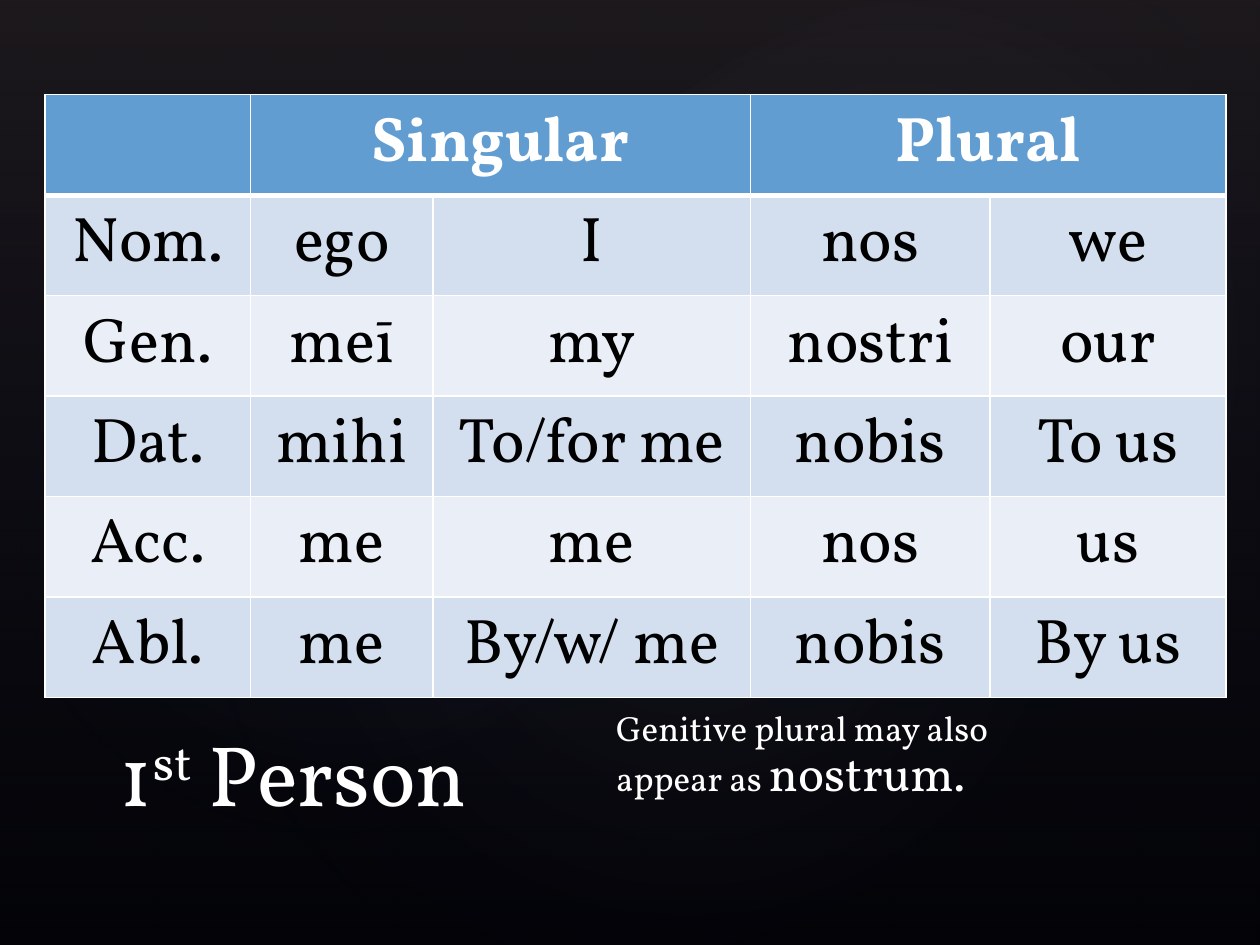
"""Builds a slide with the declension of the Latin first person pronoun."""
from lxml import etree
from pptx import Presentation
from pptx.dml.color import RGBColor
from pptx.enum.shapes import MSO_SHAPE
from pptx.enum.text import MSO_ANCHOR, MSO_AUTO_SIZE, PP_ALIGN
from pptx.oxml import parse_xml
from pptx.util import Cm, Pt

RECTANGLE, OVAL = MSO_SHAPE.RECTANGLE, MSO_SHAPE.OVAL
CENTER, LEFT = PP_ALIGN.CENTER, PP_ALIGN.LEFT
BOTTOM = MSO_ANCHOR.BOTTOM
NO_FIT, GROW = MSO_AUTO_SIZE.NONE, MSO_AUTO_SIZE.SHAPE_TO_FIT_TEXT
FONT = "Vollkorn"
DRAWING = "http://schemas.openxmlformats.org/drawingml/2006/main"
COLORS = {
    "black": "000000", "white": "FFFFFF", "header": "629DD1",
    "odd": "D3DFEE", "even": "EAEFF7",
    "shade": "504652", "navy": "242852", "glow": "C4BCC6",
}
LINEAR = '<a:lin ang="5400000" scaled="0"/>'
RADIAL = '<a:path path="circle"><a:fillToRect l="50000" t="50000" r="50000" b="50000"/></a:path>'


def style_span(span, size, color, bold=False):
    span.font.name = FONT
    span.font.size = Pt(size)
    span.font.bold = bold
    span.font.color.rgb = RGBColor.from_string(COLORS[color])


def add_gradient(kind, box, turn, stops, direction):
    shape = page.shapes.add_shape(kind, *(Cm(length) for length in box))
    shape.rotation = turn
    shape.shadow.inherit = False
    shape.line.fill.background()
    shape.fill.background()
    marks = "".join(
        f'<a:gs pos="{place * 1000}"><a:srgbClr val="{COLORS[color]}">'
        f'<a:alpha val="{alpha * 1000}"/></a:srgbClr></a:gs>'
        for place, color, alpha in stops
    )
    gradient = parse_xml(
        f'<a:gradFill xmlns:a="{DRAWING}" rotWithShape="1"><a:gsLst>{marks}</a:gsLst>{direction}</a:gradFill>'
    )
    properties = shape._element.spPr
    properties.replace(properties.find(f"{{{DRAWING}}}noFill"), gradient)


deck = Presentation()
deck.slide_width, deck.slide_height = Cm(25.4), Cm(19.05)
page = deck.slides.add_slide(deck.slide_layouts[5])
page.background.fill.solid()
page.background.fill.fore_color.rgb = RGBColor.from_string(COLORS["black"])

add_gradient(RECTANGLE, (0, 0, 25.4, 19.05), 0, [(0, "shade", 36), (100, "navy", 10)], LINEAR)
glows = [
    ((3.81, 2.9, 20.12, 15.85), 328.7, 7),
    ((-0.76, 3.25, 15.39, 12.45), 294.3, 8),
    ((9.09, 0.33, 18.01, 13.21), 328.7, 8),
]
for box, turn, alpha in glows:
    add_gradient(OVAL, box, turn, [(0, "glow", alpha), (58, "navy", 0)], RADIAL)

rows = [
    ["", "Singular", "", "Plural", ""],
    ["Nom.", "ego", "I", "nos", "we"],
    ["Gen.", "meī", "my", "nostri", "our"],
    ["Dat.", "mihi", "To/for me", "nobis", "To us"],
    ["Acc.", "me", "me", "nos", "us"],
    ["Abl.", "me", "By/w/ me", "nobis", "By us"],
]
widths = [4.14, 3.68, 6.4, 4.83, 4.75]
row_height = 2.02
table = page.shapes.add_table(
    len(rows), len(widths), Cm(0.91), Cm(1.91), Cm(sum(widths)), Cm(row_height * len(rows))
).table
for column, width in zip(table.columns, widths):
    column.width = Cm(width)
for first in (1, 3):
    table.cell(0, first).merge(table.cell(0, first + 1))
for row_index, words in enumerate(rows):
    heading = row_index == 0
    fill = "header" if heading else ("even", "odd")[row_index % 2]
    for column_index, word in enumerate(words):
        cell = table.cell(row_index, column_index)
        cell.fill.solid()
        cell.fill.fore_color.rgb = RGBColor.from_string(COLORS[fill])
        if word:
            cell.text = word
            para = cell.text_frame.paragraphs[0]
            para.alignment = CENTER
            style_span(para.runs[0], 36, "white" if heading else "black", heading)
        for side in ("lnL", "lnR", "lnT", "lnB"):
            thick = side == "lnB" and heading or side == "lnT" and row_index == 1
            border = parse_xml(
                f'<a:{side} xmlns:a="{DRAWING}" w="{Pt(3 if thick else 1)}"><a:solidFill>'
                f'<a:srgbClr val="{COLORS["white"]}"/></a:solidFill></a:{side}>'
            )
            properties = cell._tc.get_or_add_tcPr()
            properties.insert(len(etree.ETXPath(f"{{{DRAWING}}}*")(properties)) - 1, border)

title = page.shapes.title
page.shapes._spTree.append(title._element)
title.left, title.top, title.width, title.height = Cm(2.16), Cm(14.22), Cm(20.96), Cm(2.54)
title.text_frame.auto_size = NO_FIT
title.text_frame.vertical_anchor = BOTTOM
para = title.text_frame.paragraphs[0]
para.alignment = LEFT
para.line_spacing = 0.9
for text in ("1", "st", " Person"):
    span = para.add_run()
    span.text = text
    style_span(span, 49, "white")
para.runs[1].font._element.set("baseline", "30000")

note = page.shapes.add_textbox(Cm(12.17), Cm(14.22), Cm(9.73), Cm(2.31))
note.text_frame.word_wrap = True
note.text_frame.auto_size = GROW
para = note.text_frame.paragraphs[0]
para.line_spacing = 0.9
for text, size in (("Genitive plural may also appear as ", 20), ("nostrum.", 28)):
    span = para.add_run()
    span.text = text
    style_span(span, size, "white")

deck.save("out.pptx")
